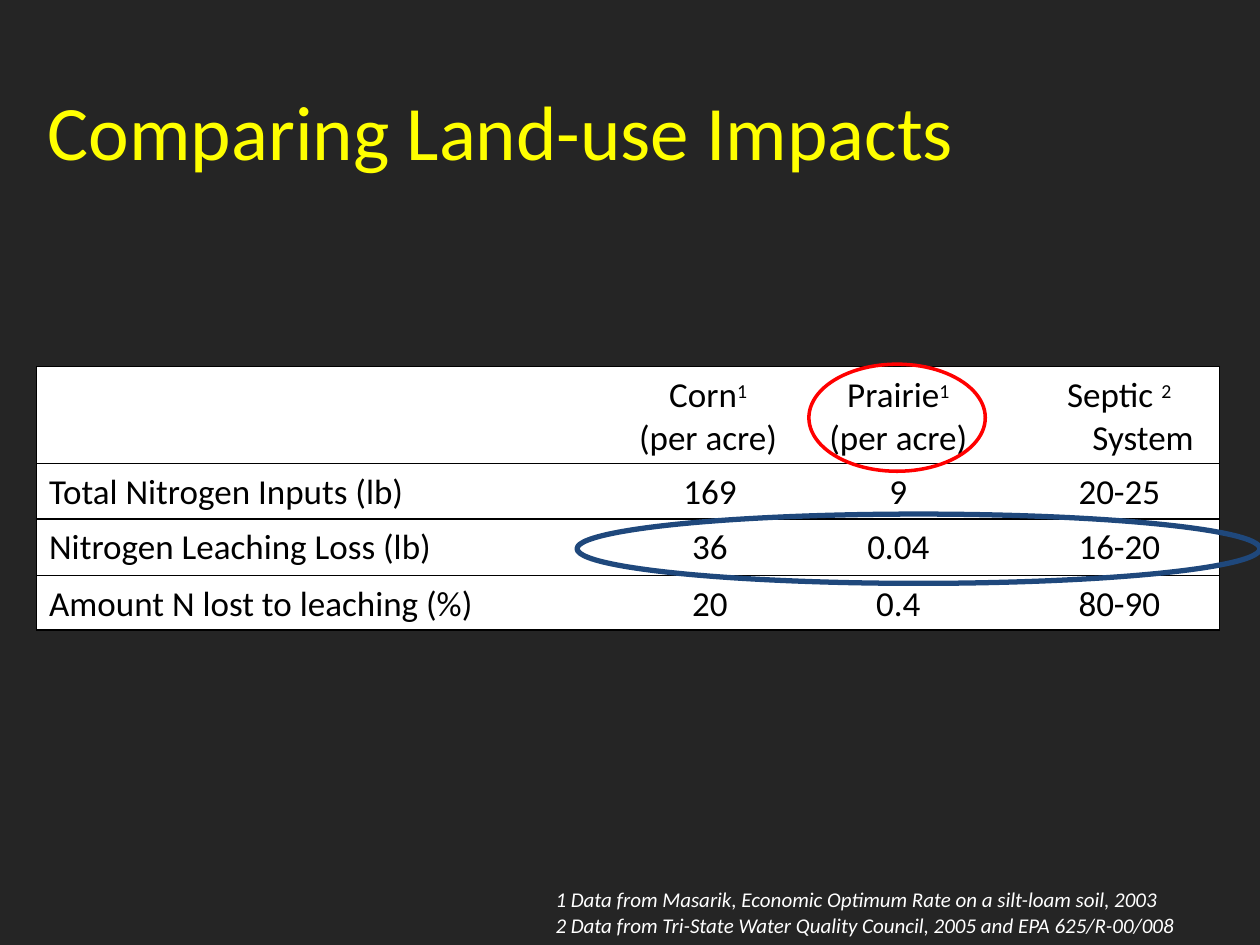
from lxml import etree
from pptx import Presentation
from pptx.dml.color import RGBColor
from pptx.enum.shapes import MSO_SHAPE
from pptx.enum.text import MSO_ANCHOR, PP_ALIGN
from pptx.oxml import parse_xml
from pptx.oxml.ns import nsdecls, qn
from pptx.util import Inches, Pt

LEFT, CENTER = PP_ALIGN.LEFT, PP_ALIGN.CENTER
TOP = MSO_ANCHOR.TOP
OVAL = MSO_SHAPE.OVAL
NO_TABLE_STYLE = "{2D5ABB26-0587-4C30-8999-92F81FD0307C}"


def rgb(value):
    return RGBColor.from_string(value)


def write(para, text, size=20, color="000000", align=LEFT, italic=False,
          superscript="", indent=0, numbered=False):
    """Fill a paragraph; indent is the left margin in inches."""
    props = para._p.get_or_add_pPr()
    if indent:
        props.set("marL", str(Inches(indent)))
    if numbered:
        props.set("indent", str(Inches(-0.12)))
        props.append(parse_xml(f'<a:buAutoNum {nsdecls("a")} type="arabicPlain"/>'))
        tabs = etree.SubElement(props, qn("a:tabLst"))
        etree.SubElement(tabs, qn("a:tab"), pos=str(Inches(indent)), algn="l")
    para.alignment = align
    for content, raised in ((text, False), (superscript, True)):
        if not content:
            continue
        span = para.add_run()
        span.text = content
        font = span.font
        font.name, font.italic = "Calibri", italic
        font.size = Pt(19.5 if raised else size)
        font.color.rgb = rgb(color)
        if raised:
            font._element.set("baseline", "26000")


deck = Presentation()
deck.slide_width, deck.slide_height = Inches(10), Inches(7.5)
page = deck.slides.add_slide(deck.slide_layouts[5])
page.background.fill.solid()
page.background.fill.fore_color.rgb = rgb("252525")

# Title
title = page.shapes.title
title.left, title.top = Inches(0.37), Inches(0.63)
title.width, title.height = Inches(7.22), Inches(0.76)
frame = title.text_frame
frame.margin_left = frame.margin_right = frame.margin_bottom = 0
frame.margin_top = Inches(0.03)
frame.vertical_anchor, frame.word_wrap = TOP, False
write(frame.paragraphs[0], "Comparing Land-use Impacts", size=44,
      color="FFFF00", indent=0.01)

# Table
column_widths = [4.29, 1.79, 1.7, 1.61]
row_heights = [0.77, 0.44, 0.45, 0.43]
table = page.shapes.add_table(4, 4, Inches(0.29), Inches(2.91),
                              Inches(9.4), Inches(2.09)).table
table.first_row = table.horz_banding = False
table._tbl.tblPr.find(qn("a:tableStyleId")).text = NO_TABLE_STYLE
for column, width in zip(table.columns, column_widths):
    column.width = Inches(width)
for row, height in zip(table.rows, row_heights):
    row.height = Inches(height)
table.cell(0, 0).merge(table.cell(0, 1))

last = len(column_widths) - 1
left_margins = [0.1, 0.32, 0, 0.02]
right_margins = [0, 0, 0.18, 0]
for row in table.rows:
    for index, cell in enumerate(row.cells):
        cell.margin_left = Inches(left_margins[index])
        cell.margin_right = Inches(right_margins[index])
        cell.margin_top, cell.margin_bottom = Inches(0.06), 0
        sides = ["lnL"] * (index == 0) + ["lnR"] * (index == last) + ["lnT", "lnB"]
        for side in sides:
            cell._tc.get_or_add_tcPr().append(parse_xml(
                f'<a:{side} {nsdecls("a")} w="{Pt(1)}"><a:solidFill>'
                f'<a:srgbClr val="000000"/></a:solidFill></a:{side}>'))
        cell.fill.solid()
        cell.fill.fore_color.rgb = rgb("FFFFFF")

# Each heading: column, name, note number, second line, alignment, indents
headings = [
    (0, "Corn", "1", "(per acre)", CENTER, (4.48, 4.48)),
    (2, "Prairie", "1", "(per acre)", CENTER, (0, 0)),
    (3, "Septic ", "2", "System", LEFT, (0.38, 0.58)),
]
for index, name, note, second_line, align, indents in headings:
    frame = table.cell(0, index).text_frame
    write(frame.paragraphs[0], name, superscript=note, align=align, indent=indents[0])
    write(frame.add_paragraph(), second_line, align=align, indent=indents[1])

records = [
    ("Total Nitrogen Inputs (lb)", "169", "9", "20-25"),
    ("Nitrogen Leaching Loss (lb)", "36", "0.04", "16-20"),
    ("Amount N lost to leaching (%)", "20", "0.4", "80-90"),
]
for row_index, record in enumerate(records, start=1):
    for index, value in enumerate(record):
        write(table.cell(row_index, index).text_frame.paragraphs[0], value,
              align=CENTER if index else LEFT)

# Sources
box = page.shapes.add_textbox(Inches(4.39), Inches(7.02), Inches(4.95), Inches(0.43))
frame = box.text_frame
frame.word_wrap = True
frame.margin_left = frame.margin_right = frame.margin_bottom = 0
frame.margin_top = Inches(0.02)
sources = [
    "Data from Masarik, Economic Optimum Rate on a silt-loam soil, 2003",
    "Data from Tri-State Water Quality Council, 2005 and EPA 625/R-00/008",
]
for index, source in enumerate(sources):
    para = frame.add_paragraph() if index else frame.paragraphs[0]
    write(para, source, size=12, color="FFFFFF", italic=True, indent=0.14, numbered=True)

# Rings around the leaching row and the prairie heading
rings = [
    (4.58, 4.08, 5.42, 0.55, "1F487C", 3),
    (6.42, 2.89, 1.4, 0.85, "FF0000", 2),
]
for left, top, width, height, color, weight in rings:
    ring = page.shapes.add_shape(OVAL, Inches(left), Inches(top),
                                 Inches(width), Inches(height))
    ring.shadow.inherit = False
    ring.fill.background()
    ring.line.color.rgb = rgb(color)
    ring.line.width = Pt(weight)

deck.save("out.pptx")
